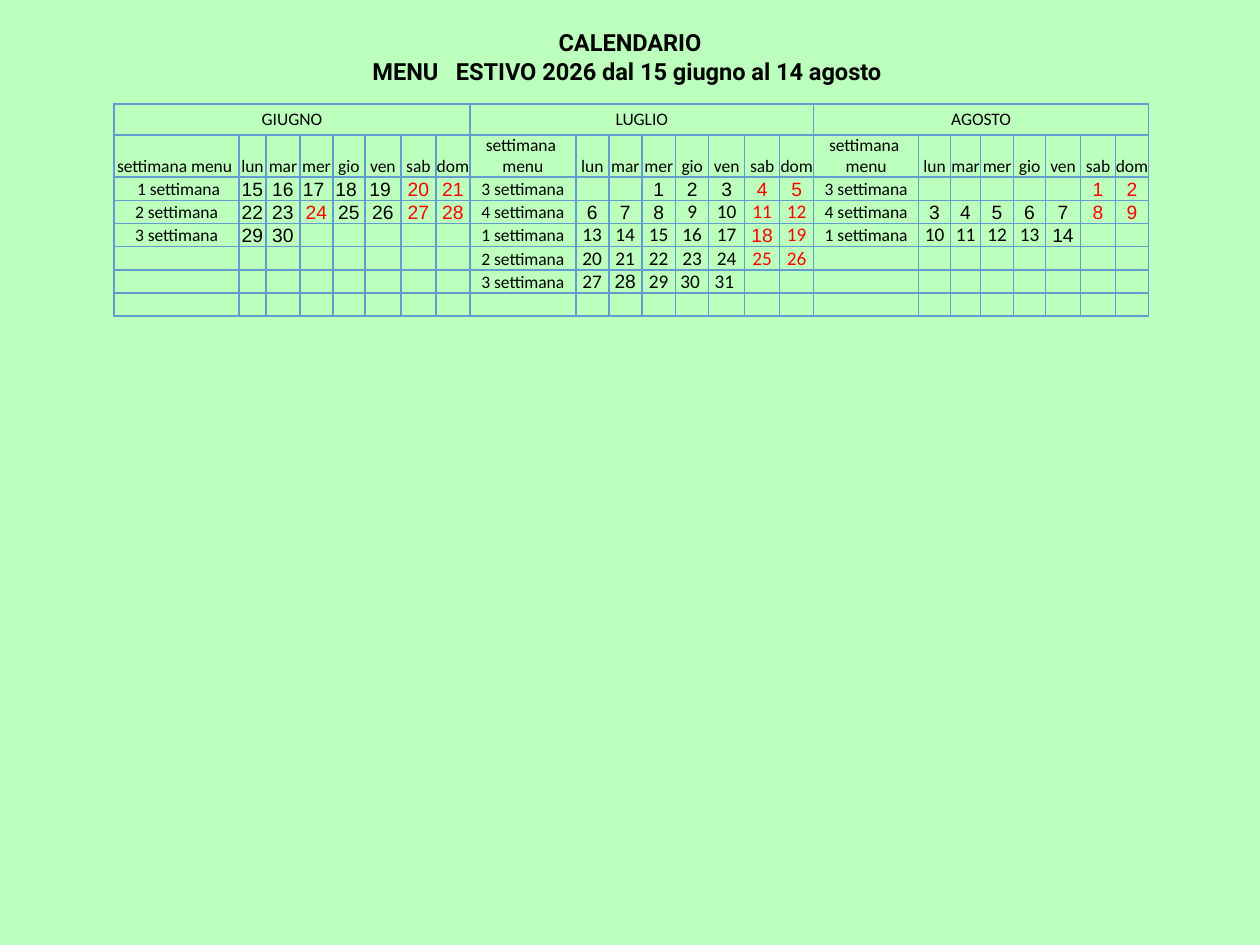
"""Build the summer menu calendar slide: a title over a three-month table."""
from lxml import etree
from pptx import Presentation
from pptx import util as u
from pptx.dml.color import RGBColor
from pptx.enum import text
from pptx.oxml import ns

PX = 914400 // 126
COLORS = {"page": "BDFFBD", "border": "629DD1", "ink": "000000", "holiday": "FF0000"}
WEEKDAYS = ["lun", "mar", "mer", "gio", "ven", "sab", "dom"]
NBSP = chr(160)
ROWS = [31, 42] + [23] * 6
MONTHS = [
    {"name": "GIUGNO", "head": "settimana menu ", "weeks": [NBSP + "1", "2", "3"],
     "first": 15, "last": 30, "offset": 0, "holidays": {24},
     "arial": set(range(15, 31)), "padded": {17, 18, 19},
     "cols": [125, 27, 34, 33, 32, 36, 35, 34]},
    {"name": "LUGLIO", "head": "settimana \nmenu", "weeks": ["3", "4", "1", "2", "3"],
     "first": 1, "last": 31, "offset": 2, "holidays": set(),
     "arial": {*range(1, 9), 18, 28}, "padded": {30, 31},
     "cols": [106, 33, 33, 34, 33, 36, 35, 34]},
    {"name": "AGOSTO", "head": "settimana \nmenu", "weeks": ["3", "4", "1"],
     "first": 1, "last": 14, "offset": 5, "holidays": set(),
     "arial": {*range(1, 10), 14}, "padded": set(),
     "cols": [105, 32, 30, 33, 32, 35, 35, 33]},
]


def rgb(name):
    """Return the named colour."""
    return RGBColor.from_string(COLORS[name])


def format_runs(tf, size, font, color="ink", bold=False):
    """Centre every paragraph and give its runs one look."""
    for p in tf.paragraphs:
        p.alignment = text.PP_ALIGN.CENTER
        for r in p.runs:
            r.font.size = u.Pt(size)
            r.font.name = font
            r.font.bold = bold
            r.font.color.rgb = rgb(color)


def style_cell(cell):
    """Give a blank cell its borders, fill, margins and line height."""
    tcPr = cell._tc.get_or_add_tcPr()
    for side in ("a:lnL", "a:lnR", "a:lnT", "a:lnB"):
        ln = etree.SubElement(tcPr, ns.qn(side), w=str(u.Pt(1)))
        fill = etree.SubElement(ln, ns.qn("a:solidFill"))
        etree.SubElement(fill, ns.qn("a:srgbClr"), val=COLORS["border"])
    cell.fill.solid()
    cell.fill.fore_color.rgb = rgb("page")
    cell.margin_left = cell.margin_right = cell.margin_top = cell.margin_bottom = 0
    cell.vertical_anchor = text.MSO_ANCHOR.BOTTOM
    cell.text_frame.paragraphs[0]._p.get_or_add_endParaRPr().set("sz", "1100")


def write_cell(cell, value, size=10, font="Calibri", color="ink"):
    """Write one formatted value in a cell."""
    cell.text_frame.text = value
    format_runs(cell.text_frame, size, font, color)


def add_title(s, x, y, w, h):
    """Place the two-line title in the title placeholder."""
    sp = s.shapes.title
    sp.left, sp.top, sp.width, sp.height = (v * PX for v in (x, y, w, h))
    tf = sp.text_frame
    tf.word_wrap = True
    tf.auto_size = text.MSO_AUTO_SIZE.SHAPE_TO_FIT_TEXT
    tf.vertical_anchor = text.MSO_ANCHOR.TOP
    tf.text = "CALENDARIO\nMENU   ESTIVO 2026 dal 15 giugno al 14 agosto "
    format_runs(tf, 13.5, "Roboto", bold=True)


def fill_month(table, left, month):
    """Fill one month's block of columns, starting at column left."""
    title = table.cell(0, left)
    title.merge(table.cell(0, left + 7))
    title.margin_left = title.margin_right = 9 * PX
    title.margin_top = title.margin_bottom = 5 * PX
    write_cell(title, month["name"])
    for i, label in enumerate([month["head"]] + WEEKDAYS):
        write_cell(table.cell(1, left + i), label)
    for i, week in enumerate(month["weeks"]):
        write_cell(table.cell(2 + i, left), f"{week} settimana")
    for day in range(month["first"], month["last"] + 1):
        week, weekday = divmod(day - month["first"] + month["offset"], 7)
        is_holiday = weekday > 4 or day in month["holidays"]
        write_cell(table.cell(2 + week, left + 1 + weekday),
                   str(day) + (NBSP if day in month["padded"] else ""), 11,
                   "Arial" if day in month["arial"] else "Calibri",
                   "holiday" if is_holiday else "ink")


def add_calendar(s, x, y):
    """Add the calendar table with its top left corner at x, y."""
    cols = [w for month in MONTHS for w in month["cols"]]
    table = s.shapes.add_table(len(ROWS), len(cols), x * PX, y * PX,
                               sum(cols) * PX, sum(ROWS) * PX).table
    table.first_row = table.horz_banding = False
    for col, w in zip(table.columns, cols):
        col.width = w * PX
    for row, h in zip(table.rows, ROWS):
        row.height = h * PX
    for cell in table.iter_cells():
        style_cell(cell)
    for i, month in enumerate(MONTHS):
        fill_month(table, i * 8, month)


def main():
    """Build and save the slide."""
    prs = Presentation()
    prs.slide_width, prs.slide_height = u.Inches(10), u.Inches(7.5)
    s = prs.slides.add_slide(prs.slide_layouts[5])
    s.background.fill.solid()
    s.background.fill.fore_color.rgb = rgb("page")
    add_title(s, 295, 22, 670, 70)
    add_calendar(s, 114, 104)
    prs.save("out.pptx")


if __name__ == "__main__":
    main()
